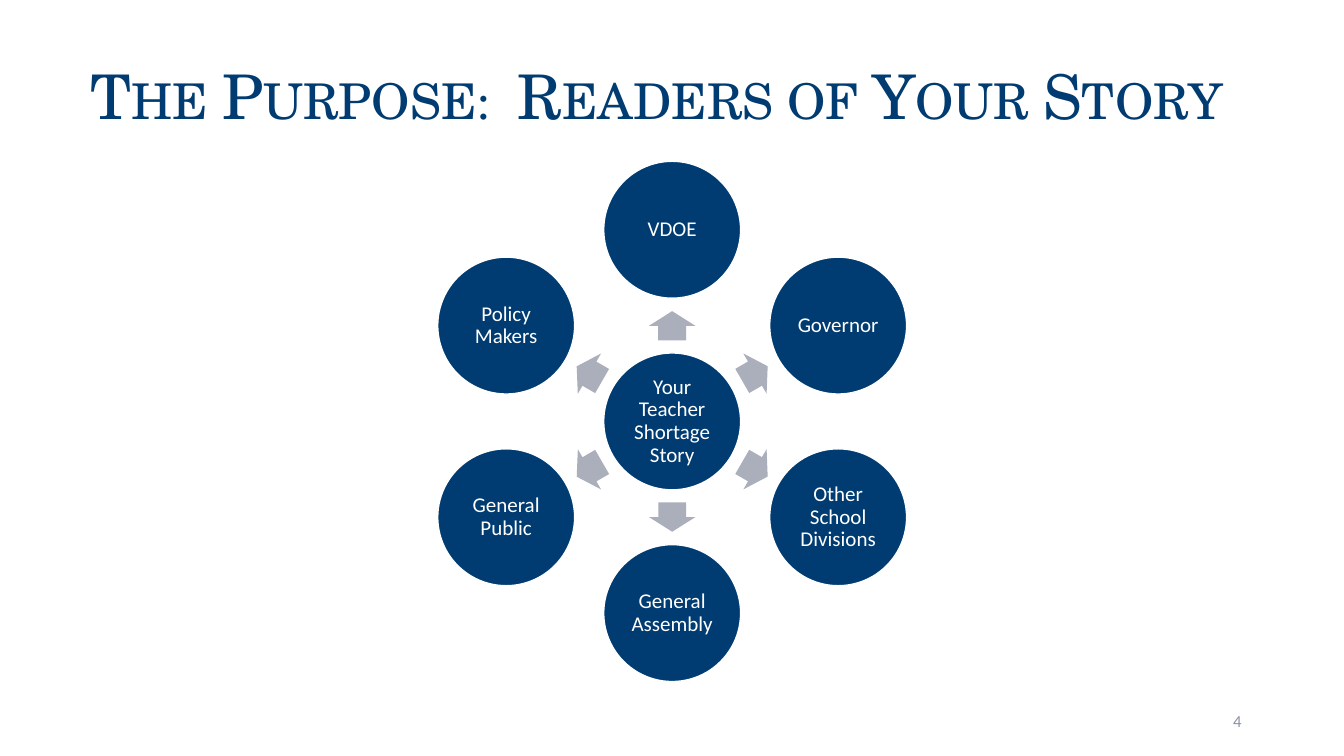
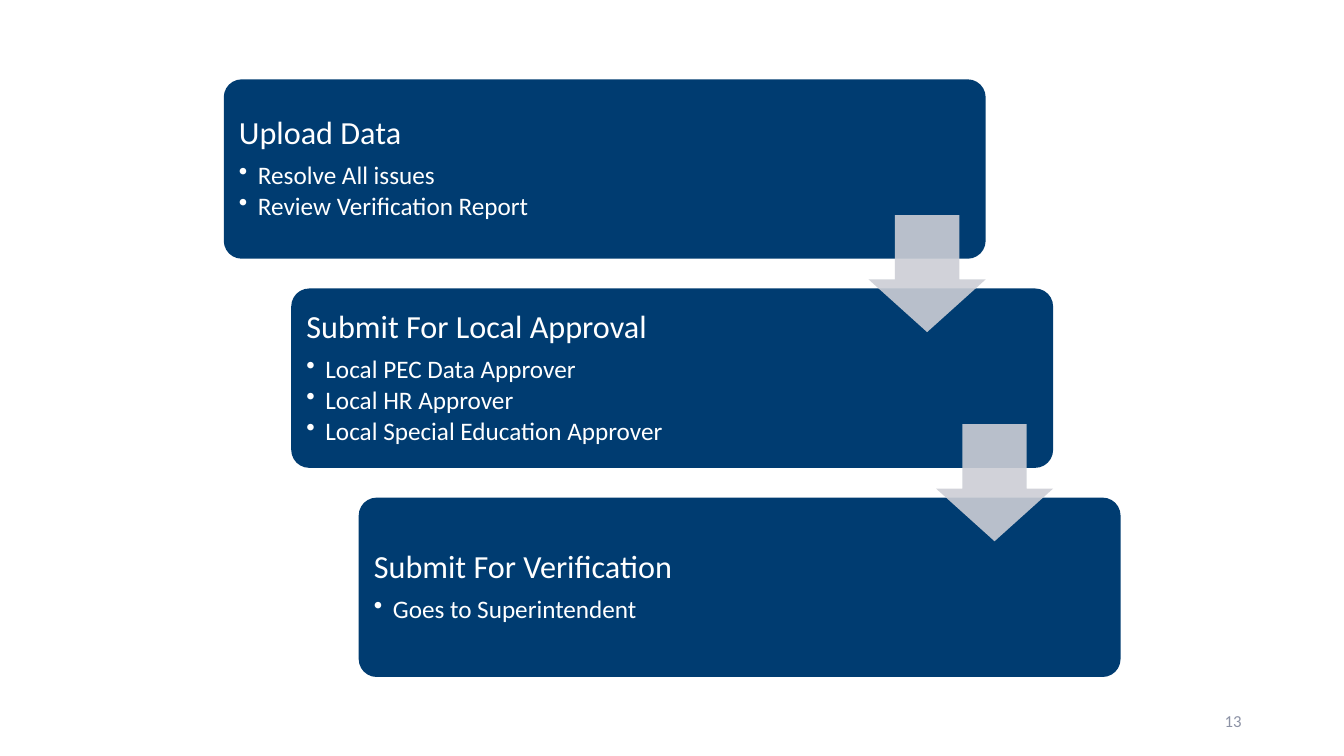
from math import cos, radians, sin

from lxml.etree import SubElement
from pptx import Presentation
from pptx.dml.color import RGBColor
from pptx.enum.shapes import MSO_SHAPE
from pptx.enum.text import MSO_ANCHOR, PP_ALIGN
from pptx.oxml.ns import qn
from pptx.util import Cm, Pt

NAVY = "003C71"
WHITE = "FFFFFF"
GREY = "ABAFBB"
PALE = "CCCED5"
MUTED = "8C92A5"
SANS = "Calibri"
SERIF = "TeX Gyre Schola"

HUB = "Your Teacher Shortage Story"
READERS = ["VDOE", "Governor", "Other School Divisions",
           "General Assembly", "General Public", "Policy Makers"]
STEPS = [
    ("Upload Data", ["Resolve All issues", "Review Verification Report"]),
    ("Submit For Local Approval",
     ["Local PEC Data Approver", "Local HR Approver",
      "Local Special Education Approver"]),
    ("Submit For Verification", ["Goes to Superintendent"]),
]


def rgb(code):
    return RGBColor.from_string(code)


def style(para, size, color=WHITE, font=SANS, align=PP_ALIGN.LEFT):
    para.alignment = align
    for run in para.runs:
        run.font.size = Pt(size)
        run.font.name = font
        run.font.color.rgb = rgb(color)


def inset(frame, left, top, right, bottom):
    frame.word_wrap = True
    frame.margin_left, frame.margin_top = Cm(left), Cm(top)
    frame.margin_right, frame.margin_bottom = Cm(right), Cm(bottom)


def add_form(slide, kind, left, top, width, height, fill, adjust=()):
    form = slide.shapes.add_shape(
        kind, Cm(left), Cm(top), Cm(width), Cm(height))
    form.shadow.inherit = False
    form.fill.solid()
    form.fill.fore_color.rgb = rgb(fill)
    form.line.fill.background()
    for index, value in enumerate(adjust):
        form.adjustments[index] = value
    return form


def add_text(slide, text, left, top, width, height):
    box = slide.shapes.add_textbox(Cm(left), Cm(top), Cm(width), Cm(height))
    box.text_frame.text = text
    return box.text_frame


def add_title(slide, text):
    frame = add_text(slide, text, 0, 0, 33.87, 3.68)
    inset(frame, 2.29, 1.78, 0.25, 0.13)
    para = frame.paragraphs[0]
    style(para, 44, NAVY, SERIF)
    para.line_spacing = 0.9
    para.space_before = Pt(10)
    para.runs[0].font._element.set("cap", "small")


def add_number(slide, number):
    frame = add_text(slide, str(number), 23.92, 17.65, 7.62, 1.02)
    inset(frame, 0.25, 0.13, 0.25, 0.13)
    frame.vertical_anchor = MSO_ANCHOR.MIDDLE
    style(frame.paragraphs[0], 12, MUTED, align=PP_ALIGN.RIGHT)


def add_circle(slide, text, x, y):
    size = 3.45
    form = add_form(slide, MSO_SHAPE.OVAL, x - size / 2, y - size / 2,
                    size, size, NAVY)
    form.line.color.rgb = rgb(WHITE)
    form.line.width = Pt(1)
    frame = form.text_frame
    frame.text = text
    inset(frame, 0.05, 0.05, 0.05, 0.05)
    frame.vertical_anchor = MSO_ANCHOR.MIDDLE
    para = frame.paragraphs[0]
    style(para, 15, align=PP_ALIGN.CENTER)
    para.line_spacing = 0.9


def add_spoke(slide, x, y, angle):
    width, height = 0.74, 1.17
    form = add_form(slide, MSO_SHAPE.RIGHT_ARROW, x - width / 2,
                    y - height / 2, width, height, GREY, (0.6, 0.5))
    form.rotation = angle % 360


def add_wheel(slide, hub, names):
    x, y = 16.94, 10.62
    add_circle(slide, hub, x, y)
    for index, name in enumerate(names):
        angle = index * 360 / len(names) - 90
        across, down = cos(radians(angle)), sin(radians(angle))
        add_spoke(slide, x + 2.41 * across, y + 2.41 * down, angle)
        add_circle(slide, name, x + 4.83 * across, y + 4.83 * down)


def add_bullet(para):
    props = para._p.get_or_add_pPr()
    props.set("marL", str(Cm(0.48)))
    props.set("indent", str(-Cm(0.48)))
    SubElement(props, qn("a:buChar")).set("char", "•")


def add_step(slide, head, points, left, top, width, height):
    form = add_form(slide, MSO_SHAPE.ROUNDED_RECTANGLE, left, top,
                    width, height, NAVY, (0.1,))
    frame = form.text_frame
    inset(frame, 0.25, 0.25, 0.25, 0.25)
    frame.vertical_anchor = MSO_ANCHOR.MIDDLE
    frame.text = "\n".join([head, *points])
    first, *rest = frame.paragraphs
    style(first, 23)
    first.line_spacing = 0.9
    first.space_after = Pt(8)
    for para in rest:
        style(para, 18)
        para.level = 1
        para.line_spacing = 0.9
        para.space_after = Pt(2.7)
        add_bullet(para)


def add_drop(slide, left, top, size):
    form = add_form(slide, MSO_SHAPE.DOWN_ARROW, left, top,
                    size, size, PALE, (0.55, 0.45))
    color = form._element.spPr.find(qn("a:solidFill"))[0]
    SubElement(color, qn("a:alpha")).set("val", "90000")


def add_stairs(slide, steps):
    width, height, size = 19.2, 4.52, 2.95
    spots = [(5.64 + 1.7 * i, 2 + 5.27 * i) for i in range(len(steps))]
    for (head, points), (left, top) in zip(steps, spots):
        add_step(slide, head, points, left, top, width, height)
    for left, top in spots[:-1]:
        add_drop(slide, left + width - size, top + 3.42, size)


def add_slide(deck, number):
    slide = deck.slides.add_slide(deck.slide_layouts[6])
    add_number(slide, number)
    return slide


def main():
    deck = Presentation()
    deck.slide_width, deck.slide_height = Cm(33.87), Cm(19.05)
    slide = add_slide(deck, 4)
    add_title(slide, "The Purpose:  Readers of Your Story")
    add_wheel(slide, HUB, READERS)
    add_stairs(add_slide(deck, 13), STEPS)
    deck.save("out.pptx")


if __name__ == "__main__":
    main()
